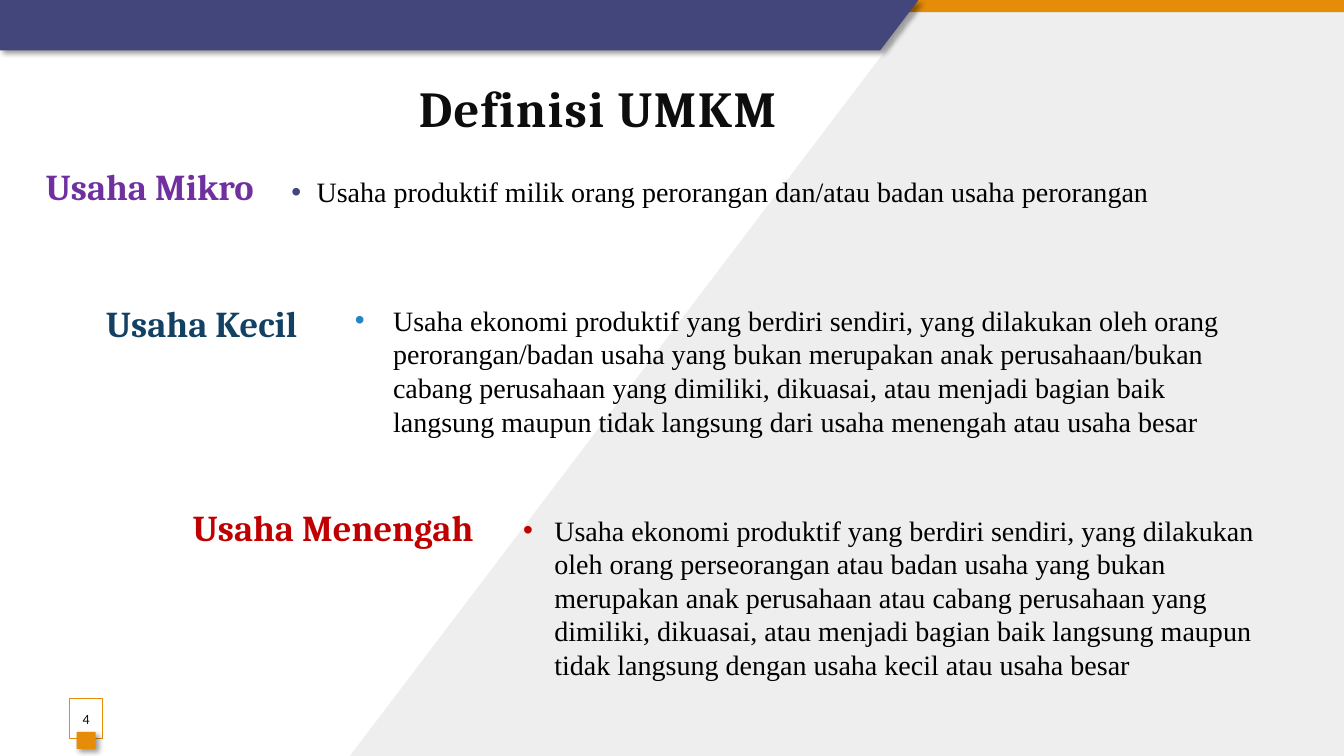
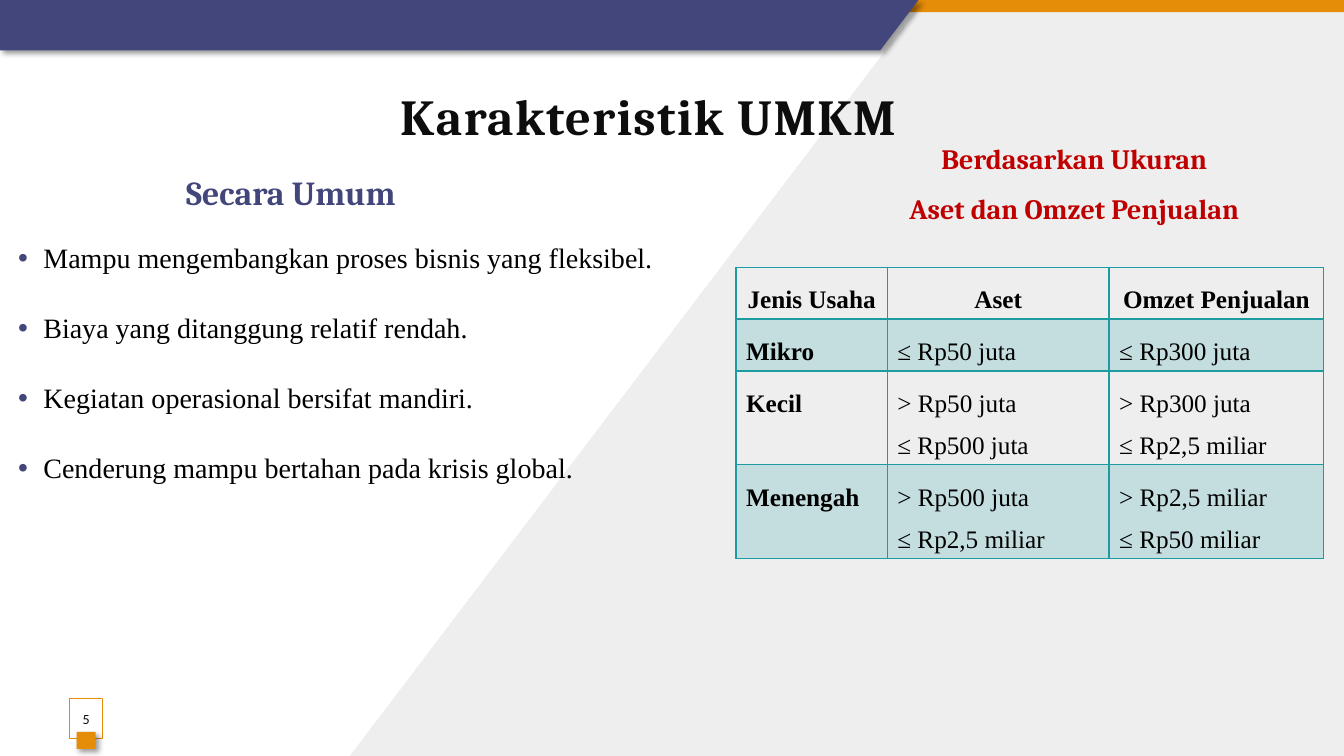
from lxml import etree
from pptx import Presentation
from pptx.dml.color import RGBColor
from pptx.enum.shapes import MSO_SHAPE as Shape
from pptx.enum.text import MSO_ANCHOR as Anchor, MSO_AUTO_SIZE as AutoSize, PP_ALIGN as Align
from pptx.oxml.ns import qn
from pptx.util import Inches, Pt

WIDTH, HEIGHT = 13.33, 7.5
INDIGO, ORANGE, GRAY, WHITE = "43467B", "E58C09", "EEEEEE", "FFFFFF"
BLACK, INK, RED, TEAL = "000000", "0D0D0D", "C00000", "1D9BA1"
PURPLE, NAVY, BLUE = "7030A0", "134163", "2683C6"
HEADING_FONT, TEXT_FONT = "Cambria", "Times New Roman"
SNUG = (0.05, 0.05)
LIST_STYLE = dict(before=12, after=2, bullet=INDIGO, indent=0.25, inset=SNUG)


def rgb(color):
    return RGBColor.from_string(color)


def add_xml(parent, tag, **attributes):
    return etree.SubElement(parent, qn(tag), attributes)


def paint(fill, color, owner=None, alpha=None):
    """Fill with a solid colour; alpha is the opacity in percent within owner."""
    fill.solid()
    fill.fore_color.rgb = rgb(color)
    if alpha is not None:
        solid = owner.find(qn("a:solidFill"))
        add_xml(solid[0], "a:alpha", val=str(alpha * 1000))


def write(frame, lines, size=20, font=TEXT_FONT, color=BLACK, bold=False,
          align=Align.LEFT, spacing=1.0, before=0, after=0, bullet=None,
          indent=0.0, tracking=0, inset=(0.1, 0.05), anchor=Anchor.TOP):
    """Write one paragraph per line; bullet is the colour of its mark."""
    frame.word_wrap = True
    frame.auto_size = AutoSize.NONE
    frame.vertical_anchor = anchor
    frame.margin_left = frame.margin_right = Inches(inset[0])
    frame.margin_top = frame.margin_bottom = Inches(inset[1])
    for index, line in enumerate(lines):
        paragraph = frame.add_paragraph() if index else frame.paragraphs[0]
        paragraph.alignment = align
        paragraph.line_spacing = spacing
        paragraph.space_before, paragraph.space_after = Pt(before), Pt(after)
        run = paragraph.add_run()
        run.text = line
        run.font.size, run.font.name, run.font.bold = Pt(size), font, bold
        run.font.color.rgb = rgb(color)
        if tracking:
            run.font._element.set("spc", str(tracking * 100))
        if bullet:
            props = paragraph._p.get_or_add_pPr()
            props.set("marL", str(Inches(indent)))
            props.set("indent", str(-Inches(indent)))
            add_xml(add_xml(props, "a:buClr"), "a:srgbClr", val=bullet)
            add_xml(props, "a:buFont", typeface="Arial")
            add_xml(props, "a:buChar", char="•")


def finish(shape, color, shadow=False, alpha=None):
    """Give a shape its fill, no outline and, if wanted, a soft shadow."""
    properties = shape.element.spPr
    paint(shape.fill, color, properties, alpha)
    shape.line.fill.background()
    shape.shadow.inherit = False
    if shadow:
        effects = properties.find(qn("a:effectLst"))
        outer = add_xml(effects, "a:outerShdw", blurRad=str(Pt(4)), dist=str(Pt(3)),
                        dir="2700000", algn="tl", rotWithShape="0")
        tint = add_xml(outer, "a:srgbClr", val=BLACK)
        add_xml(tint, "a:alpha", val="40000")
    return shape


def add_box(slide, box, color, **look):
    return finish(slide.shapes.add_shape(Shape.RECTANGLE, *map(Inches, box)), color, **look)


def add_outline(slide, points, color, **look):
    start, *others = [(Inches(x), Inches(y)) for x, y in points]
    builder = slide.shapes.build_freeform(*start, scale=1.0)
    builder.add_line_segments(others, close=True)
    return finish(builder.convert_to_shape(), color, **look)


def add_text(slide, box, lines, **style):
    write(slide.shapes.add_textbox(*map(Inches, box)).text_frame, lines, **style)


def add_heading(slide, box, lines, color, size=26, spacing=0.9, align=Align.LEFT):
    add_text(slide, box, lines, size=size, font=HEADING_FONT, color=color, bold=True,
             align=align, spacing=spacing, before=12, after=2, inset=SNUG)


def fill_placeholder(placeholder, box, lines, **style):
    placeholder.left, placeholder.top, placeholder.width, placeholder.height = map(Inches, box)
    write(placeholder.text_frame, lines, **style)


def decorate_layout(layout, slide):
    """Draw the shared background on a slide and move it to the layout."""
    background = [
        add_outline(slide, [(9.11, 0), (WIDTH, 0), (WIDTH, HEIGHT), (3.47, HEIGHT),
                            (9.11, 0.07)], GRAY),
        add_box(slide, (0, 0, WIDTH, 0.12), ORANGE),
        add_outline(slide, [(0, 0), (9.11, 0), (8.73, 0.5), (0, 0.5)], INDIGO, shadow=True),
    ]
    for position, shape in enumerate(background, start=2):
        layout.shapes.element.insert(position, shape.element)


def add_page_number(slide, number):
    frame = add_box(slide, (0.69, 6.93, 0.33, 0.4), WHITE, alpha=82)
    frame.line.color.rgb = rgb(ORANGE)
    frame.line.width = Pt(0.75)
    write(frame.text_frame, [str(number)], size=10, font="Calibri", color=INK,
          align=Align.CENTER, inset=(0, 0.05), anchor=Anchor.MIDDLE)
    add_box(slide, (0.76, 7.26, 0.19, 0.17), ORANGE, shadow=True)


def start_slide(slide, number, title, left, top):
    fill_placeholder(slide.shapes.title, (left, top, 11.82, 0.77), [title], size=36,
                     font=HEADING_FONT, color=INK, bold=True, align=Align.CENTER,
                     tracking=1, anchor=Anchor.MIDDLE)
    add_page_number(slide, number)


def set_borders(cell, **widths):
    """Draw the cell's edges, given as L, R, T and B in points."""
    properties = cell._tc.get_or_add_tcPr()
    for position, (side, width) in enumerate(widths.items()):
        edge = etree.Element(qn(f"a:ln{side}"), w=str(Pt(width)))
        add_xml(add_xml(edge, "a:solidFill"), "a:srgbClr", val=TEAL)
        properties.insert(position, edge)


def add_size_table(slide, left, top, widths, heights, rows):
    table = slide.shapes.add_table(len(rows), len(widths), Inches(left), Inches(top),
                                   Inches(sum(widths)), Inches(sum(heights))).table
    table.first_row = table.horz_banding = False
    for column, width in zip(table.columns, widths):
        column.width = Inches(width)
    for r, (row, height) in enumerate(zip(rows, heights)):
        table.rows[r].height = Inches(height)
        for c, text in enumerate(row):
            cell = table.cell(r, c)
            write(cell.text_frame, text.split("\n"), size=18, bold=r == 0 or c == 0,
                  align=Align.LEFT if r else Align.CENTER, spacing=1.5)
            if r % 2:
                paint(cell.fill, TEAL, cell._tc.get_or_add_tcPr(), alpha=20)
            else:
                cell.fill.background()
            set_borders(cell, L=1, R=1, T=2 if r == 1 else 1, B=1 if r else 2)


def build_definitions(slide):
    start_slide(slide, 4, "Definisi UMKM", 0.02, 0.68)
    add_heading(slide, (0.13, 1.66, 2.71, 0.47), ["Usaha Mikro"], PURPLE,
                spacing=0.8, align=Align.CENTER)
    fill_placeholder(slide.placeholders[1], (2.84, 1.72, 9.57, 1.01),
                     ["Usaha produktif milik orang perorangan dan/atau badan usaha perorangan"],
                     spacing=0.9, **LIST_STYLE)

    add_heading(slide, (1, 2.99, 2.71, 0.47), ["Usaha Kecil"], NAVY)
    add_text(slide, (3.42, 2.96, 8.82, 1.45), [
        "Usaha ekonomi produktif yang berdiri sendiri, yang dilakukan oleh orang "
        "perorangan/badan usaha yang bukan merupakan anak perusahaan/bukan cabang "
        "perusahaan yang dimiliki, dikuasai, atau menjadi bagian baik langsung maupun "
        "tidak langsung dari usaha menengah atau usaha besar"], bullet=BLUE, indent=0.38)

    add_heading(slide, (1.86, 5.01, 2.99, 0.47), ["Usaha Menengah"], RED)
    add_text(slide, (5.09, 5.04, 7.87, 1.78), [
        "Usaha ekonomi produktif yang berdiri sendiri, yang dilakukan oleh orang "
        "perseorangan atau badan usaha yang bukan merupakan anak perusahaan atau cabang "
        "perusahaan yang dimiliki, dikuasai, atau menjadi bagian baik langsung maupun "
        "tidak langsung dengan usaha kecil atau usaha besar"], bullet=RED, indent=0.31)


def build_characteristics(slide):
    start_slide(slide, 5, "Karakteristik UMKM", 0.52, 0.76)
    add_heading(slide, (0.21, 1.7, 5.35, 0.47), ["Secara Umum"], INDIGO,
                size=24, align=Align.CENTER)
    fill_placeholder(slide.placeholders[1], (0.13, 2.17, 6.54, 3.14), [
        "Mampu mengembangkan proses bisnis yang fleksibel.",
        "Biaya yang ditanggung relatif rendah.",
        "Kegiatan operasional bersifat mandiri.",
        "Cenderung mampu bertahan pada krisis global.",
    ], spacing=1.5, **LIST_STYLE)

    add_heading(slide, (7.98, 1.39, 5.35, 0.47),
                ["Berdasarkan Ukuran", "Aset dan Omzet Penjualan"], RED,
                size=20, align=Align.CENTER)
    add_size_table(slide, 7.3, 2.65, [1.5, 2.2, 2.13], [0.51, 0.51, 0.93, 0.93], [
        ("Jenis Usaha", "Aset", "Omzet Penjualan"),
        ("Mikro", "≤ Rp50 juta", "≤ Rp300 juta"),
        ("Kecil", "> Rp50 juta\n≤ Rp500 juta", "> Rp300 juta\n≤ Rp2,5 miliar"),
        ("Menengah", "> Rp500 juta\n≤ Rp2,5 miliar", "> Rp2,5 miliar\n≤ Rp50 miliar"),
    ])


def main():
    deck = Presentation()
    deck.slide_width, deck.slide_height = Inches(WIDTH), Inches(HEIGHT)
    layout = deck.slide_layouts[1]
    definitions, characteristics = (deck.slides.add_slide(layout) for _ in range(2))
    decorate_layout(layout, definitions)
    build_definitions(definitions)
    build_characteristics(characteristics)
    deck.save("out.pptx")


if __name__ == "__main__":
    main()
